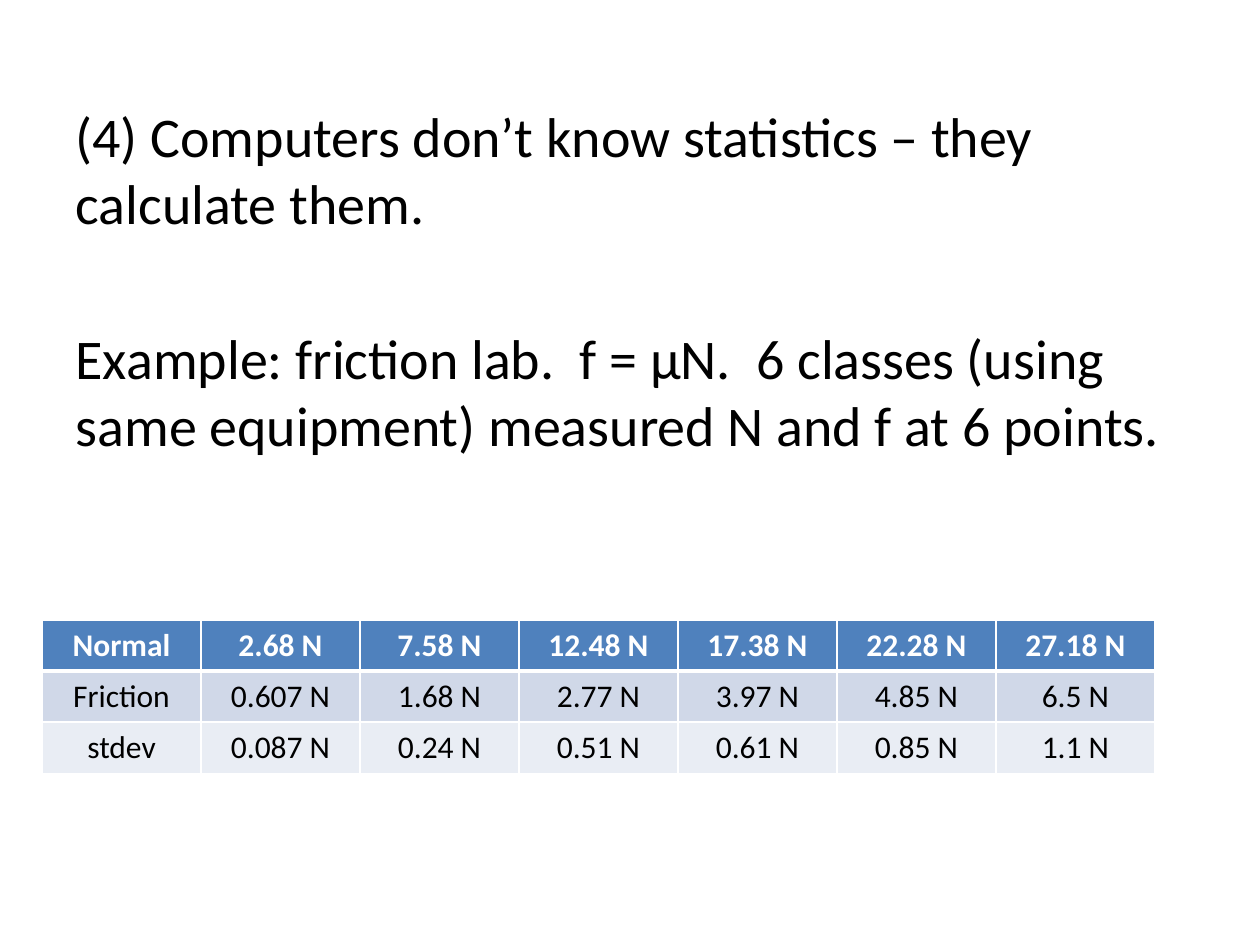
"""Build a slide about friction lab statistics with a table of measurements."""
import pptx
import pptx.dml.color
import pptx.enum.text
import pptx.oxml
import pptx.oxml.ns
import pptx.util

PX = 914400 // 126
STATEMENTS = [
    ("(4) Computers don’t know statistics – they calculate them.", None),
    ("Example: friction lab.  f = µN.  6 classes (using same equipment) "
     "measured N and f at 6 points.", 50),
]
ROWS = [
    ("Normal", "2.68 N", "7.58 N", "12.48 N", "17.38 N", "22.28 N", "27.18 N"),
    ("Friction", "0.607 N", "1.68 N", "2.77 N", "3.97 N", "4.85 N", "6.5 N"),
    ("stdev", "0.087 N", "0.24 N", "0.51 N", "0.61 N", "0.85 N", "1.1 N"),
]
FILLS = ["4F81BD", "D0D8E8", "E9EDF4"]
BODY = (63, 95, 1134, 409)
TABLE_LEFT, TABLE_TOP, COL_W, ROW_H = 42, 620, 159, 51


def px(n):
    return pptx.util.Emu(n * PX)


def rgb(value):
    return pptx.dml.color.RGBColor.from_string(value)


def write(p, text, size=18, color="000000", bold=False, align=None, before=None):
    p.alignment = align
    if before is not None:
        p.space_before = pptx.util.Pt(before)
    r = p.add_run()
    r.text = text
    r.font.name = "Calibri"
    r.font.size = pptx.util.Pt(size)
    r.font.bold = bold
    r.font.color.rgb = rgb(color)


def border(cell, **widths):
    tc_pr = cell._tc.get_or_add_tcPr()
    for i, side in enumerate("LRTB"):
        tc_pr.insert(i, pptx.oxml.parse_xml(
            f'<a:ln{side} {pptx.oxml.ns.nsdecls("a")} w="{widths.get(side, 1) * 12700}">'
            f'<a:solidFill><a:srgbClr val="FFFFFF"/></a:solidFill></a:ln{side}>'))


def add_statements(s):
    sp = s.placeholders[1]
    sp.left, sp.top, sp.width, sp.height = map(px, BODY)
    tf = sp.text_frame
    for i, (text, before) in enumerate(STATEMENTS):
        p = tf.add_paragraph() if i else tf.paragraphs[0]
        write(p, text, size=32, before=before)
        p_pr = p._p.get_or_add_pPr()
        p_pr.set("marL", "0")
        p_pr.set("indent", "0")
        p_pr.append(pptx.oxml.parse_xml(f'<a:buNone {pptx.oxml.ns.nsdecls("a")}/>'))


def add_measurements(s):
    n_rows, n_cols = len(ROWS), len(ROWS[0])
    table = s.shapes.add_table(n_rows, n_cols, px(TABLE_LEFT), px(TABLE_TOP),
                               px(COL_W * n_cols), px(ROW_H * n_rows)).table
    for i, (values, fill) in enumerate(zip(ROWS, FILLS)):
        head = i == 0
        for j, value in enumerate(values):
            cell = table.cell(i, j)
            cell.fill.solid()
            cell.fill.fore_color.rgb = rgb(fill)
            border(cell, T=3 if i == 1 else 1, B=3 if head else 1)
            write(cell.text_frame.paragraphs[0], value, bold=head,
                  color="FFFFFF" if head else "000000",
                  align=pptx.enum.text.PP_ALIGN.CENTER)


def main():
    prs = pptx.Presentation()
    prs.slide_width, prs.slide_height = px(1260), px(945)
    s = prs.slides.add_slide(prs.slide_layouts[1])
    title = s.shapes.title._element
    title.getparent().remove(title)
    add_statements(s)
    add_measurements(s)
    prs.save("out.pptx")


if __name__ == "__main__":
    main()
